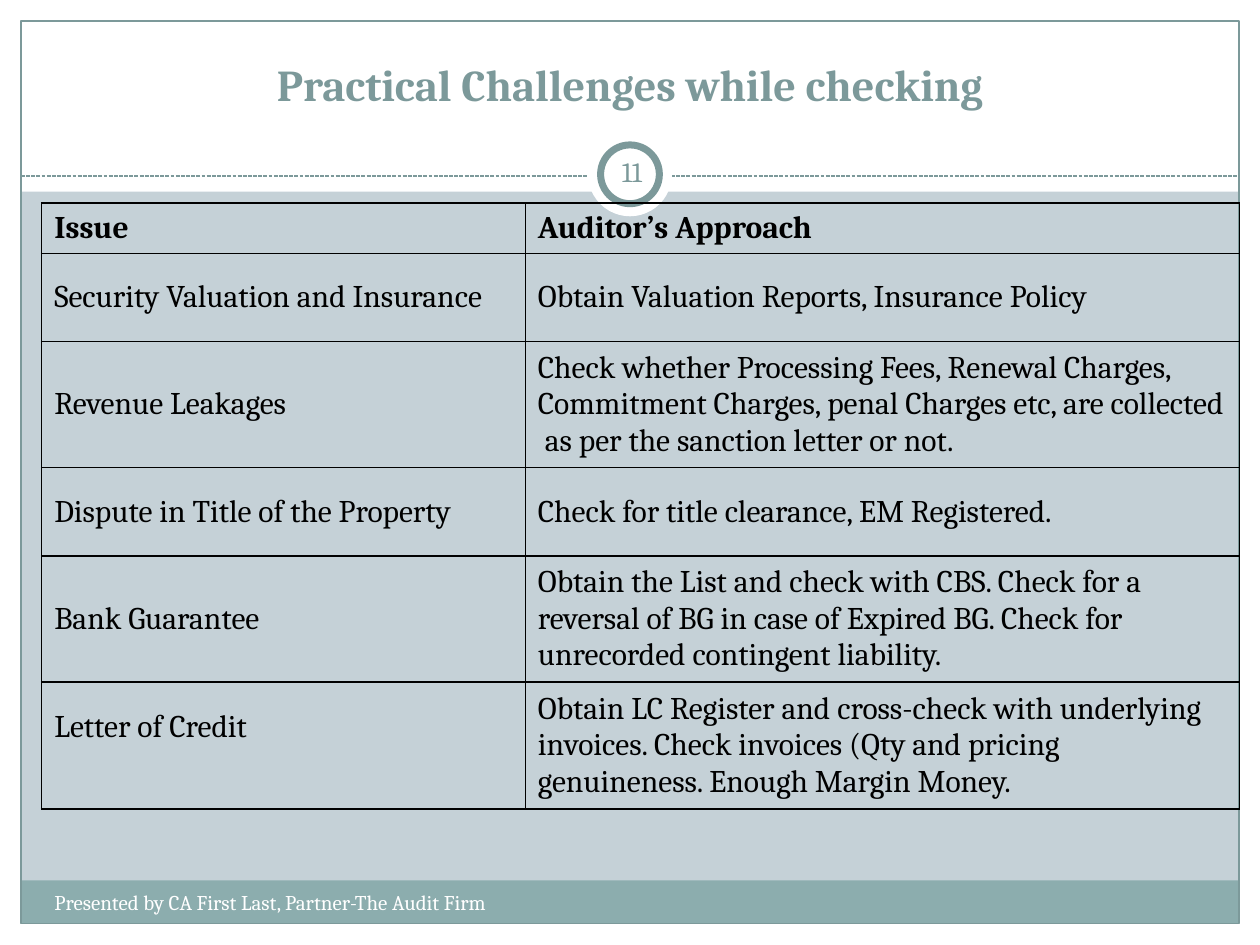
from dataclasses import dataclass

import pptx
import pptx.util
import pptx.dml.color
import pptx.enum.dml
import pptx.enum.shapes
import pptx.enum.text
import pptx.oxml
import pptx.oxml.ns

Pt = pptx.util.Pt
RGB = pptx.dml.color.RGBColor.from_string
SHAPE = pptx.enum.shapes.MSO_SHAPE
ANCHOR = pptx.enum.text.MSO_ANCHOR
ALIGN = pptx.enum.text.PP_ALIGN


@dataclass(frozen=True)
class Theme:
    font: str = "Cambria"
    back: str = "C5D1D7"
    white: str = "FFFFFF"
    black: str = "000000"
    accent: str = "7C999A"
    band: str = "8CADAE"
    title: float = 25.2
    body: float = 18
    number: float = 16
    footer: float = 12
    hairline: float = 0.75
    grid: float = 1
    ring: float = 4


THEME = Theme()
WIDTH, HEIGHT, MARGIN = 720, 540, 12

ROWS = [
    ("Issue", "Auditor’s Approach"),
    ("Security Valuation and Insurance", "Obtain Valuation Reports, Insurance Policy"),
    ("Revenue Leakages",
     "Check whether Processing Fees, Renewal Charges, Commitment Charges, "
     "penal Charges etc, are collected  as per the sanction letter or not."),
    ("Dispute in Title of the Property", "Check for title clearance, EM Registered."),
    ("Bank Guarantee",
     "Obtain the List and check with CBS. Check for a reversal of BG in case of "
     "Expired BG. Check for unrecorded contingent liability."),
    ("Letter of Credit",
     "Obtain LC Register and cross-check with underlying invoices. "
     "Check invoices (Qty and pricing genuineness. Enough Margin Money."),
]
ROW_HEIGHTS = [28.8, 50.4, 69.6, 50.4, 69.6, 72.7]


def add_shape(s, kind, box, fill=None, line=None, weight=THEME.hairline):
    sp = s.shapes.add_shape(kind, *map(Pt, box))
    sp.shadow.inherit = False
    if fill:
        sp.fill.solid()
        sp.fill.fore_color.rgb = RGB(fill)
    else:
        sp.fill.background()
    if line:
        sp.line.color.rgb = RGB(line)
        sp.line.width = Pt(weight)
    else:
        sp.line.fill.background()


def style_text(tf, size, color, bold=False, align=ALIGN.LEFT):
    for p in tf.paragraphs:
        p.alignment = align
        for r in p.runs:
            r.font.name = THEME.font
            r.font.size = Pt(size)
            r.font.bold = bold
            r.font.color.rgb = RGB(color)


def add_text(s, box, text, size, color, bold=False, align=ALIGN.LEFT,
             anchor=ANCHOR.TOP, insets=(7.2, 3.6, 7.2, 3.6)):
    tf = s.shapes.add_textbox(*map(Pt, box)).text_frame
    tf.word_wrap = True
    tf.vertical_anchor = anchor
    tf.margin_left, tf.margin_top, tf.margin_right, tf.margin_bottom = map(Pt, insets)
    tf.text = text
    style_text(tf, size, color, bold, align)


def add_frame(s, x, y, w, h):
    """White edges around the box, footer band inside it, and its outline."""
    right, bottom = x + w, y + h
    edges = [(0, bottom, WIDTH, HEIGHT - bottom), (0, 0, WIDTH, 109.5),
             (0, 0, x, HEIGHT), (right, 0, WIDTH - right, HEIGHT)]
    for edge in edges:
        add_shape(s, SHAPE.RECTANGLE, edge, fill=THEME.white)
    add_shape(s, SHAPE.RECTANGLE, (x, bottom - 24.7, w, 24.7), fill=THEME.band)
    add_shape(s, SHAPE.RECTANGLE, (x, y, w, h), line=THEME.accent)


def add_divider(s, x, y, w):
    cn = s.shapes.add_connector(pptx.enum.shapes.MSO_CONNECTOR.STRAIGHT,
                                Pt(x), Pt(y), Pt(x + w), Pt(y))
    cn.line.color.rgb = RGB(THEME.accent)
    cn.line.width = Pt(THEME.hairline)
    cn.line.dash_style = pptx.enum.dml.MSO_LINE.SQUARE_DOT
    cn._element.spPr.append(pptx.oxml.parse_xml(
        f"<a:effectLst {pptx.oxml.ns.nsdecls('a')}/>"))


def add_badge(s, x, y, size, number):
    inset = 7.2
    inner = size - 2 * inset
    add_shape(s, SHAPE.OVAL, (x, y, size, size), fill=THEME.white)
    add_shape(s, SHAPE.OVAL, (x + inset, y + inset, inner, inner),
              fill=THEME.white, line=THEME.accent, weight=THEME.ring)
    add_text(s, (x + inset, y + 5, 36, 34.6), number, THEME.number, THEME.accent,
             align=ALIGN.CENTER, anchor=ANCHOR.MIDDLE, insets=(3.6,) * 4)


def set_borders(cell):
    tc_pr = cell._tc.get_or_add_tcPr()
    for i, side in enumerate(("lnL", "lnR", "lnT", "lnB")):
        tc_pr.insert(i, pptx.oxml.parse_xml(
            f'<a:{side} {pptx.oxml.ns.nsdecls("a")} w="{Pt(THEME.grid)}">'
            f'<a:solidFill><a:srgbClr val="{THEME.black}"/></a:solidFill></a:{side}>'))


def add_issue_table(s, x, y, w):
    tbl = s.shapes.add_table(len(ROWS), 2, Pt(x), Pt(y), Pt(w),
                             Pt(sum(ROW_HEIGHTS))).table
    tbl.first_row = tbl.horz_banding = False
    issue_width = 276.4
    tbl.columns[0].width = Pt(issue_width)
    tbl.columns[1].width = Pt(w - issue_width)
    for i, (texts, height) in enumerate(zip(ROWS, ROW_HEIGHTS)):
        tbl.rows[i].height = Pt(height)
        for cell, text in zip(tbl.rows[i].cells, texts):
            cell.fill.background()
            cell.vertical_anchor = ANCHOR.MIDDLE
            cell.text = text
            style_text(cell.text_frame, THEME.body, THEME.black, bold=i == 0)
            set_borders(cell)
    # The last issue sits half a line above the middle of its row.
    tbl.cell(len(ROWS) - 1, 0).margin_bottom = Pt(24.6)


def main():
    prs = pptx.Presentation()
    prs.slide_width, prs.slide_height = Pt(WIDTH), Pt(HEIGHT)
    s = prs.slides.add_slide(prs.slide_layouts[6])
    s.background.fill.solid()
    s.background.fill.fore_color.rgb = RGB(THEME.back)

    inner = WIDTH - 2 * MARGIN
    add_frame(s, MARGIN, MARGIN, inner, 515.8)
    add_divider(s, MARGIN, 100.6, inner)
    add_text(s, (24, 30, 672, 36), "Practical Challenges while checking",
             THEME.title, THEME.accent, bold=True, align=ALIGN.CENTER,
             anchor=ANCHOR.MIDDLE)
    add_text(s, (24, 504.7, 378, 28.8),
             "Presented by CA First Last, Partner-The Audit Firm",
             THEME.footer, THEME.white)
    add_badge(s, 336, 75.6, 48, "11")
    add_issue_table(s, 23.8, 116, 684.4)
    prs.save("out.pptx")


if __name__ == "__main__":
    main()
